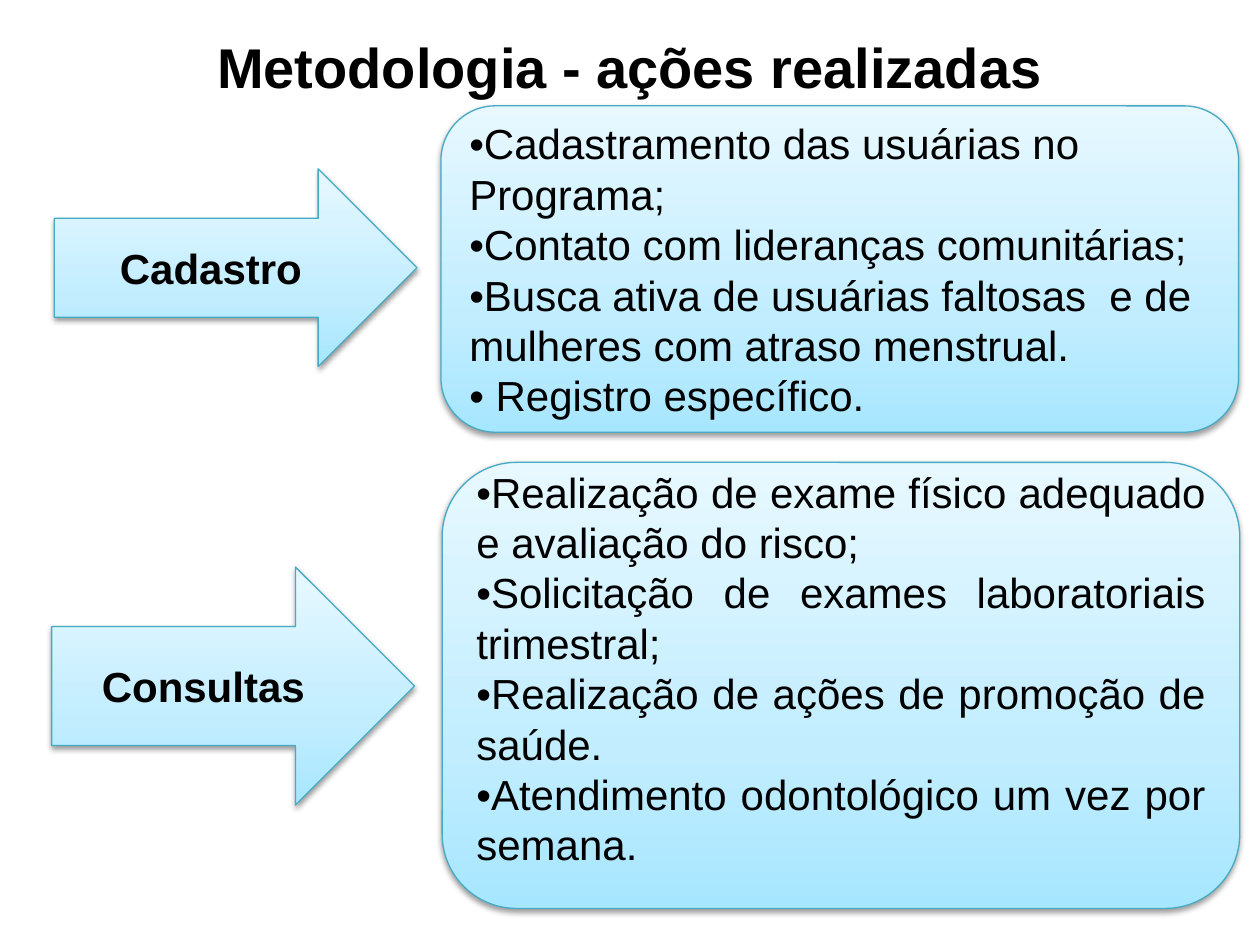
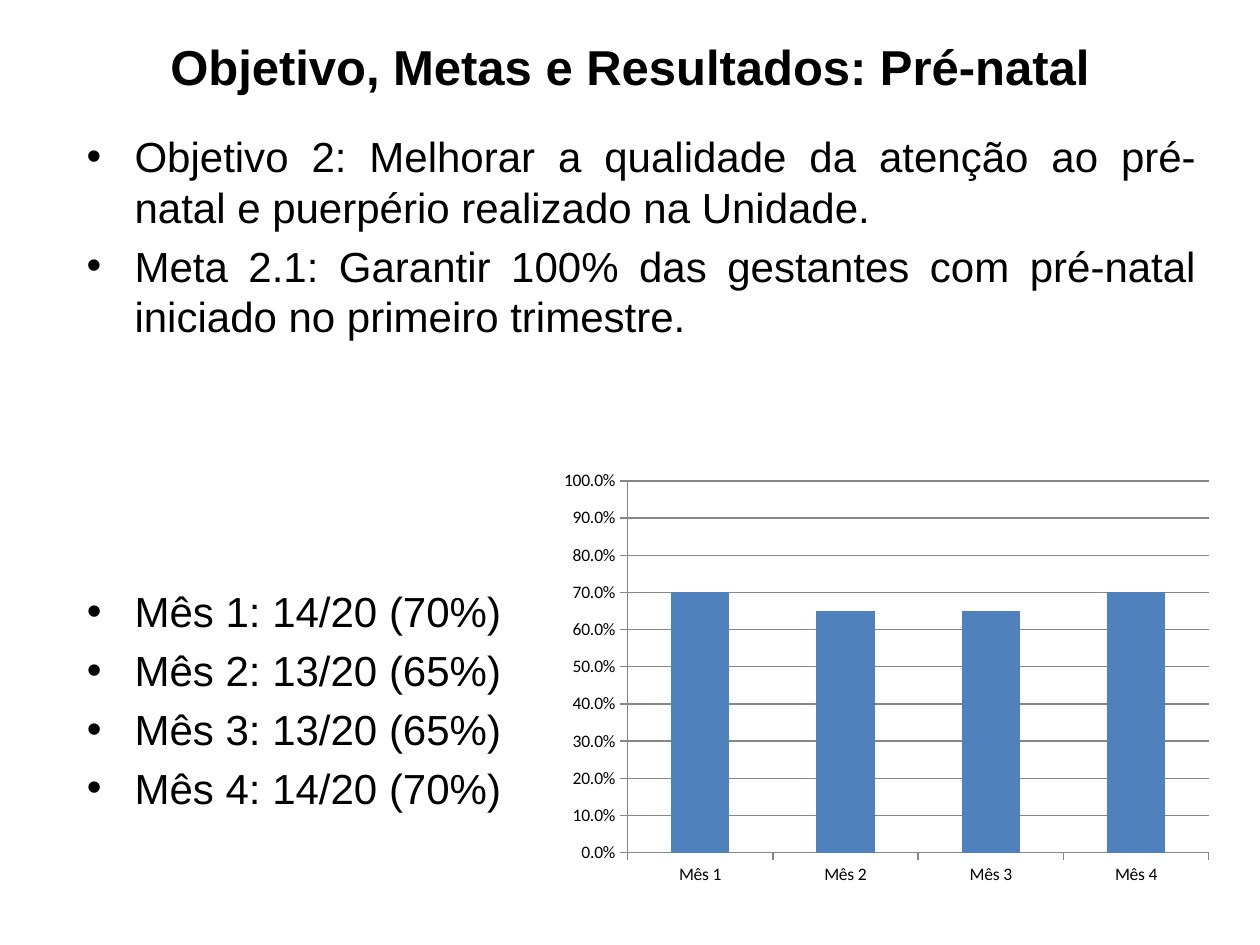
from lxml.etree import SubElement
from pptx import Presentation
from pptx.chart.data import CategoryChartData
from pptx.dml.color import RGBColor
from pptx.enum.chart import XL_CHART_TYPE, XL_TICK_MARK
from pptx.enum.shapes import MSO_SHAPE
from pptx.enum.text import MSO_ANCHOR, PP_ALIGN
from pptx.oxml.ns import qn
from pptx.util import Emu, Pt

EMU_PER_PX = 9144  # 100 px to the inch
COLORS = {
    "text": "000000",
    "outline": "46AAC5",
    "deep": "A7E6FF",
    "middle": "C1EDFF",
    "pale": "E7F8FF",
    "bar": "4F81BD",
    "grid": "868686",
    "shadow": "000000",
}
PANEL_STOPS = [(0, "deep"), (35, "middle"), (100, "pale")]
FONT = "Arial"
CHART_FONT = "Calibri"
BODY_SIZE = 24


def px(length):
    return Emu(length * EMU_PER_PX)


def rgb(name):
    return RGBColor.from_string(COLORS[name])


def add_bullet(paragraph, indent):
    properties = paragraph._p.get_or_add_pPr()
    properties.set("marL", str(px(indent)))
    properties.set("indent", str(-px(indent)))
    SubElement(properties, qn("a:buFont"), typeface=FONT)
    SubElement(properties, qn("a:buChar"), char="•")


def write(frame, text, size=BODY_SIZE, bold=False, align=PP_ALIGN.LEFT,
          anchor=MSO_ANCHOR.MIDDLE, before=0, bullet_indent=0):
    """Fill a text frame, one paragraph for each line of text."""
    frame.word_wrap = True
    frame.vertical_anchor = anchor
    frame.text = text
    for paragraph in frame.paragraphs:
        paragraph.alignment = align
        paragraph.space_before = Pt(before)
        if bullet_indent:
            add_bullet(paragraph, bullet_indent)
        for run in paragraph.runs:
            run.font.name = FONT
            run.font.size = Pt(size)
            run.font.bold = bold
            run.font.color.rgb = rgb("text")


class Deck:
    def __init__(self):
        self.presentation = Presentation()
        self.presentation.slide_width = px(1000)
        self.presentation.slide_height = px(750)
        self.slide = None

    def start_slide(self, heading, top, height, size):
        layout = self.presentation.slide_layouts.get_by_name("Title Only")
        self.slide = self.presentation.slides.add_slide(layout)
        title = self.slide.shapes.title
        title.left, title.top = px(50), px(top)
        title.width, title.height = px(900), px(height)
        write(title.text_frame, heading, size=size, bold=True,
              align=PP_ALIGN.CENTER)

    def panel(self, preset, box, text, **style):
        """Add a preset shape with the pale blue gradient and soft shadow."""
        panel = self.slide.shapes.add_shape(preset, *map(px, box))
        panel.line.color.rgb = rgb("outline")
        panel.line.width = Pt(0.75)
        panel.fill.gradient()
        panel.fill.gradient_angle = 90
        panel.shadow.inherit = False
        properties = panel._element.spPr
        stops = properties.find(qn("a:gradFill")).find(qn("a:gsLst"))
        for stop in list(stops):
            stops.remove(stop)
        for percent, color in PANEL_STOPS:
            stop = SubElement(stops, qn("a:gs"), pos=str(percent * 1000))
            SubElement(stop, qn("a:srgbClr"), val=COLORS[color])
        shadow = SubElement(properties.find(qn("a:effectLst")),
                            qn("a:outerShdw"), blurRad="40000", dist="20000",
                            dir="5400000", rotWithShape="0")
        tint = SubElement(shadow, qn("a:srgbClr"), val=COLORS["shadow"])
        SubElement(tint, qn("a:alpha"), val="38000")
        write(panel.text_frame, text, **style)
        return panel

    def arrow(self, box, text):
        self.panel(MSO_SHAPE.RIGHT_ARROW, box, text, bold=True,
                   align=PP_ALIGN.CENTER)

    def card(self, box, actions, bottom_inset=5, **style):
        card = self.panel(MSO_SHAPE.ROUNDED_RECTANGLE, box,
                          "\n".join("•" + action for action in actions),
                          **style)
        card.text_frame.margin_bottom = px(bottom_inset)

    def bullets(self, box, items, **style):
        text_box = self.slide.shapes.add_textbox(*map(px, box))
        write(text_box.text_frame, "\n".join(items), anchor=MSO_ANCHOR.TOP,
              before=4.8, bullet_indent=38, **style)

    def column_chart(self, box, categories, values):
        data = CategoryChartData(number_format="0.0%")
        data.categories = categories
        data.add_series("Series 1", values)
        chart = self.slide.shapes.add_chart(
            XL_CHART_TYPE.COLUMN_CLUSTERED, *map(px, box), data).chart
        chart.has_legend = False
        chart.has_title = False
        chart.font.name = CHART_FONT
        chart.font.size = Pt(10)
        chart.font.color.rgb = rgb("text")

        plot = chart.plots[0]
        plot.gap_width = 150
        plot.vary_by_categories = False
        bars = plot.series[0].format.fill
        bars.solid()
        bars.fore_color.rgb = rgb("bar")

        scale = chart.value_axis
        scale.minimum_scale, scale.maximum_scale = 0, 1
        scale.major_unit = 0.1
        scale.has_major_gridlines = True
        scale.tick_labels.number_format = "0.0%"
        scale.tick_labels.number_format_is_linked = False
        for axis in (scale, chart.category_axis):
            axis.major_tick_mark = XL_TICK_MARK.OUTSIDE
        for lines in (scale, chart.category_axis, scale.major_gridlines):
            lines.format.line.color.rgb = rgb("grid")
            lines.format.line.width = Pt(0.75)


def build_methodology(deck):
    deck.start_slide("Metodologia - ações realizadas", 13, 79, 32)
    deck.arrow((43, 134, 288, 157), "Cadastro")
    deck.card((350, 84, 633, 259), [
        "Cadastramento das usuárias no Programa;",
        "Contato com lideranças comunitárias;",
        "Busca ativa de usuárias faltosas  e de mulheres com atraso menstrual.",
        " Registro específico.",
    ])
    deck.arrow((41, 450, 288, 189), "Consultas")
    deck.card((351, 367, 633, 354), [
        "Realização de exame físico adequado e avaliação do risco;",
        "Solicitação de exames laboratoriais trimestral;",
        "Realização de ações de promoção de saúde.",
        "Atendimento odontológico um vez por semana.",
    ], bottom_inset=33, align=PP_ALIGN.JUSTIFY)


def build_results(deck):
    deck.start_slide("Objetivo, Metas e Resultados: Pré-natal", 21, 63, 28)
    deck.bullets((59, 99, 900, 190), [
        "Objetivo 2: Melhorar a qualidade da atenção ao pré-natal e puerpério "
        "realizado na Unidade.",
        "Meta 2.1: Garantir 100% das gestantes com pré-natal iniciado no "
        "primeiro trimestre.",
    ], align=PP_ALIGN.JUSTIFY)
    women = 20
    early_starts = {"Mês 1": 14, "Mês 2": 13, "Mês 3": 13, "Mês 4": 14}
    deck.bullets((59, 460, 378, 200), [
        f"{month}: {count}/{women} ({count / women:.0%})"
        for month, count in early_starts.items()
    ])
    deck.column_chart((437, 367, 533, 342), list(early_starts),
                      [count / women for count in early_starts.values()])


def main():
    deck = Deck()
    build_methodology(deck)
    build_results(deck)
    deck.presentation.save("out.pptx")


if __name__ == "__main__":
    main()
